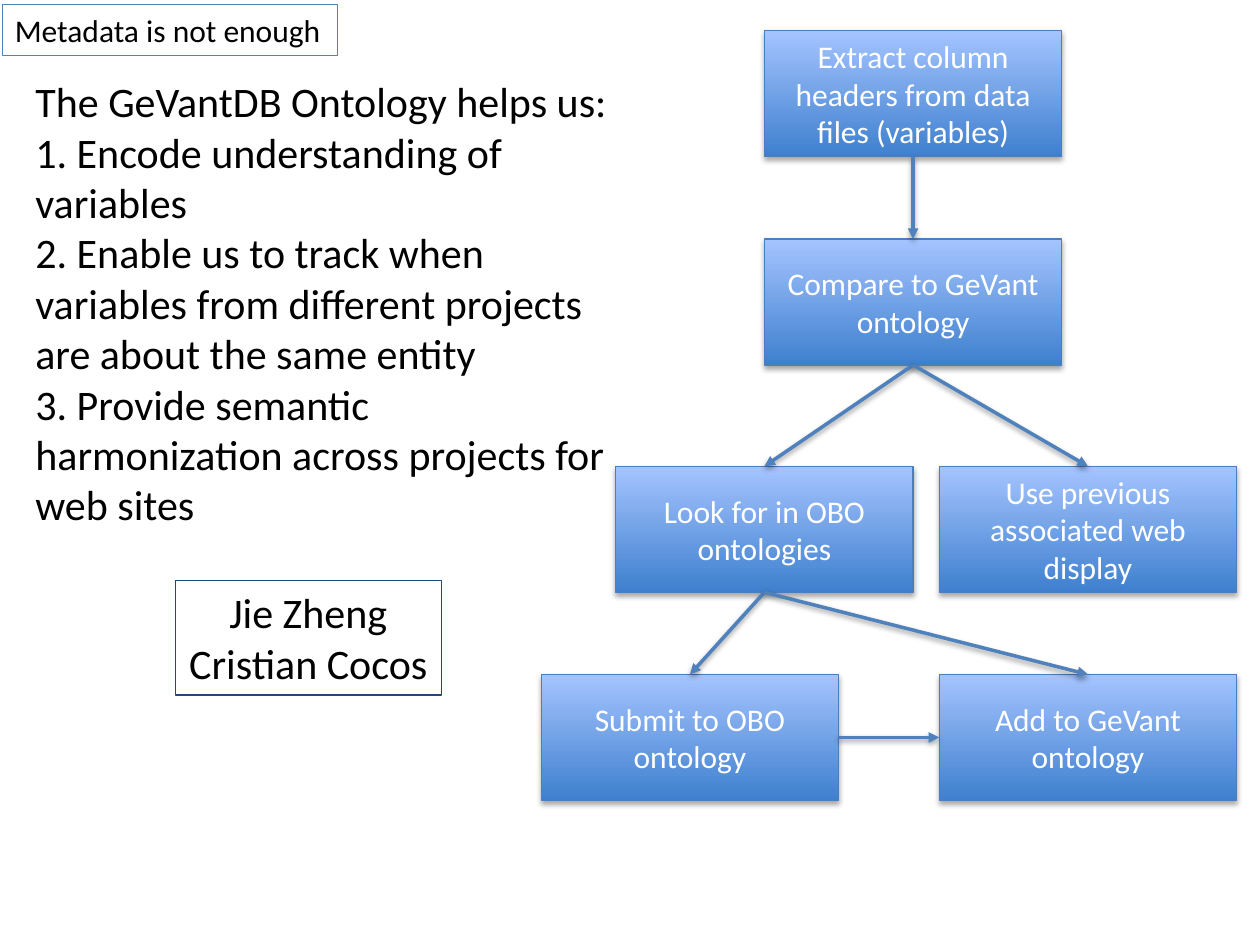
from lxml.etree import SubElement
from pptx import Presentation
from pptx.dml.color import RGBColor
from pptx.enum.shapes import MSO_CONNECTOR as CONNECTOR, MSO_SHAPE as SHAPE
from pptx.enum.text import MSO_ANCHOR as ANCHOR, MSO_AUTO_SIZE as AUTO, PP_ALIGN as ALIGN
from pptx.oxml import parse_xml
from pptx.oxml.ns import nsdecls, qn
from pptx.util import Pt

rgb = RGBColor.from_string


def write(frame, *paragraphs, size=18, color="000000", align=ALIGN.LEFT,
          anchor=ANCHOR.TOP, wrap=True, fit=AUTO.NONE):
    frame.word_wrap, frame.auto_size, frame.vertical_anchor = wrap, fit, anchor
    for i, text in enumerate(paragraphs):
        par = frame.paragraphs[0] if i == 0 else frame.add_paragraph()
        par.text, par.alignment = text, align
        for run in par.runs:
            run.font.name, run.font.size = "Calibri", Pt(size)
            run.font.color.rgb = rgb(color)
        # Line breaks take the text size too, so that lines stay even
        for line_break in par._p.findall(qn("a:br")):
            SubElement(line_break, qn("a:rPr"), sz=str(size * 100))


def add_shadow(shape, distance, opacity):
    shape._element.spPr.append(parse_xml(
        f'<a:effectLst {nsdecls("a")}><a:outerShdw blurRad="{Pt(3.15)}" '
        f'dist="{Pt(distance)}" dir="5400000" rotWithShape="0"><a:srgbClr val="000000">'
        f'<a:alpha val="{opacity * 1000}"/></a:srgbClr></a:outerShdw></a:effectLst>'))


prs = Presentation()
prs.slide_width, prs.slide_height = Pt(720), Pt(540)
slide = prs.slides.add_slide(prs.slide_layouts[5])
shapes = slide.shapes

# Ontology benefits
benefits = shapes.title
benefits.left, benefits.top, benefits.width, benefits.height = Pt(13), Pt(54), Pt(343.4), Pt(237.6)
write(benefits.text_frame, "\n".join([
    "The GeVantDB Ontology helps us:",
    "1. Encode understanding of variables",
    "2. Enable us to track when variables from different projects are about the same entity",
    "3. Provide semantic harmonization across projects for web sites",
]), size=24, anchor=ANCHOR.MIDDLE)

# Outlined labels: people and topic
for left, top, width, height, outline, size, align, lines in [
    (100.2, 331.7, 152, 65.4, "1F497D", 24, ALIGN.CENTER, ["Jie Zheng", "Cristian Cocos"]),
    (1.4, 2.6, 191.5, 29.1, "4F81BD", 18, ALIGN.LEFT, ["Metadata is not enough"]),
]:
    label = shapes.add_textbox(Pt(left), Pt(top), Pt(width), Pt(height))
    label.line.color.rgb, label.line.width = rgb(outline), Pt(0.75)
    write(label.text_frame, *lines, size=size, align=align, wrap=False, fit=AUTO.SHAPE_TO_FIT_TEXT)

# Workflow steps: left, top, text
STEP_W, STEP_H = 170, 72
steps = {}
for key, left, top, text in [
    ("extract", 436.8, 17.5, "Extract column headers from data files (variables)"),
    ("compare", 436.8, 136.6, "Compare to GeVant ontology"),
    ("look", 351.8, 266.5, "Look for in OBO ontologies"),
    ("reuse", 536.7, 266.5, "Use previous associated web display"),
    ("add", 536.7, 385.4, "Add to GeVant ontology"),
    ("submit", 309.3, 385.4, "Submit to OBO ontology"),
]:
    step = shapes.add_shape(SHAPE.RECTANGLE, Pt(left), Pt(top), Pt(STEP_W), Pt(STEP_H))
    step.fill.gradient()
    step.fill.gradient_angle = 90
    for stop, position, color in zip(step.fill.gradient_stops, (0, 1), ("3F80CE", "A4C4FF")):
        stop.position, stop.color.rgb = position, rgb(color)
    step.line.color.rgb, step.line.width = rgb("4B7EBC"), Pt(0.75)
    add_shadow(step, 1.8, 35)
    write(step.text_frame, text, color="FFFFFF", align=ALIGN.CENTER, anchor=ANCHOR.MIDDLE)
    steps[key] = step

# Arrows between the sides of the steps
TOP, LEFT, BOTTOM, RIGHT = range(4)
for source, out_side, target, in_side in [
    ("extract", BOTTOM, "compare", TOP),
    ("compare", BOTTOM, "look", TOP),
    ("compare", BOTTOM, "reuse", TOP),
    ("look", BOTTOM, "submit", TOP),
    ("look", BOTTOM, "add", TOP),
    ("submit", RIGHT, "add", LEFT),
]:
    arrow = shapes.add_connector(CONNECTOR.STRAIGHT, 0, 0, 0, 0)
    arrow.begin_connect(steps[source], out_side)
    arrow.end_connect(steps[target], in_side)
    arrow.line.color.rgb, arrow.line.width = rgb("4F81BD"), Pt(2)
    SubElement(arrow.line._get_or_add_ln(), qn("a:tailEnd"), type="triangle")
    add_shadow(arrow, 1.6, 38)

prs.save("out.pptx")
